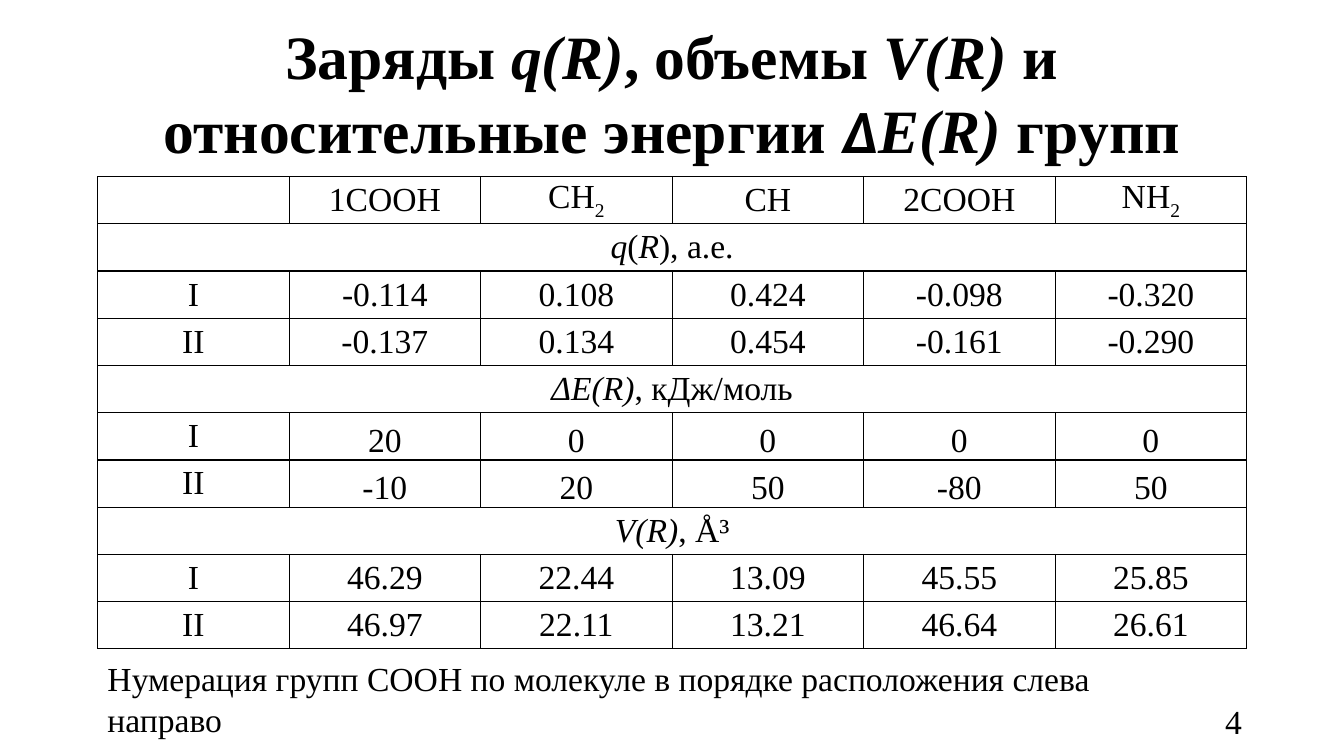
from dataclasses import dataclass

import lxml.etree
import pptx
import pptx.dml.color
import pptx.enum.text
import pptx.oxml.ns
import pptx.util

Cm = pptx.util.Cm
Align = pptx.enum.text.PP_ALIGN
Anchor = pptx.enum.text.MSO_ANCHOR


@dataclass(frozen=True)
class Theme:
    ink: str = "000000"
    font: str = "Times New Roman"
    symbol_font: str = "Calibri"
    title_size: int = 44
    body_size: int = 24
    border_width: int = 1


THEME = Theme()
ITALIC = {"italic": True}
SUBSCRIPT = -25000

# Each text is a list of (words, format) pairs
TITLE = [
    ("Заряды ", {}), ("q(R)", ITALIC), (", объемы ", {}), ("V(R) ", ITALIC),
    ("и относительные энергии ", {}),
    ("Δ", {"italic": True, "name": THEME.symbol_font}),
    ("E(R)", ITALIC), (" групп", {}),
]
NOTE = [("Нумерация групп COOH по молекуле в порядке расположения слева направо", {})]

# Column heads: formula and subscript
GROUPS = [("", ""), ("1COOH", ""), ("CH", "2"), ("CH", ""), ("2COOH", ""), ("NH", "2")]

# Sections: heading, anchor of the values, values of molecules I and II
SECTIONS = [
    ([("q", ITALIC), ("(", {}), ("R", ITALIC), ("), а.е.", {})], Anchor.MIDDLE,
     {"I": "-0.114 0.108 0.424 -0.098 -0.320",
      "II": "-0.137 0.134 0.454 -0.161 -0.290"}),
    ([("ΔE(R)", ITALIC), (", кДж/моль", {})], Anchor.BOTTOM,
     {"I": "20 0 0 0 0",
      "II": "-10 20 50 -80 50"}),
    ([("V(R)", ITALIC), (", Å³", {})], Anchor.MIDDLE,
     {"I": "46.29 22.44 13.09 45.55 25.85",
      "II": "46.97 22.11 13.21 46.64 26.61"}),
]


class SlideBuilder:
    def __init__(self, slide, theme):
        self.slide = slide
        self.theme = theme

    def add_spans(self, frame, pieces, align, **base):
        """Fill the first paragraph of a frame with formatted spans."""
        para = frame.paragraphs[0]
        para.alignment = align
        for words, changes in pieces:
            span = para.add_run()
            span.text = words
            style = {"name": self.theme.font, "size": self.theme.body_size,
                     "bold": False, "italic": False, **base, **changes}
            style["size"] = pptx.util.Pt(style["size"])
            baseline = style.pop("baseline", None)
            for key, value in style.items():
                setattr(span.font, key, value)
            span.font.color.rgb = pptx.dml.color.RGBColor.from_string(self.theme.ink)
            if baseline:
                span.font._element.set("baseline", str(baseline))

    def text(self, place, pieces, align, anchor=Anchor.TOP, wrap=True, **base):
        box = self.slide.shapes.add_textbox(*map(Cm, place))
        box.text_frame.word_wrap = wrap
        box.text_frame.vertical_anchor = anchor
        self.add_spans(box.text_frame, pieces, align, **base)

    def border(self, cell):
        properties = cell._tc.get_or_add_tcPr()
        for side in ("a:lnL", "a:lnR", "a:lnT", "a:lnB"):
            line = lxml.etree.SubElement(properties, pptx.oxml.ns.qn(side))
            line.set("w", str(pptx.util.Pt(self.theme.border_width)))
            fill = lxml.etree.SubElement(line, pptx.oxml.ns.qn("a:solidFill"))
            color = lxml.etree.SubElement(fill, pptx.oxml.ns.qn("a:srgbClr"))
            color.set("val", self.theme.ink)

    def table(self, place, rows, columns):
        table = self.slide.shapes.add_table(rows, columns, *map(Cm, place)).table
        for flag in ("first_row", "horz_banding"):
            setattr(table, flag, False)
        margins = {"margin_left": Cm(0.18), "margin_right": Cm(0.18),
                   "margin_top": 0, "margin_bottom": 0}
        for cell in table.iter_cells():
            for key, value in margins.items():
                setattr(cell, key, value)
            self.border(cell)
            cell.fill.background()
        return table

    def cell(self, cell, pieces, anchor=Anchor.MIDDLE):
        cell.vertical_anchor = anchor
        self.add_spans(cell.text_frame, pieces, Align.CENTER)


def main():
    deck = pptx.Presentation()
    deck.slide_width, deck.slide_height = Cm(33.87), Cm(19.05)
    page = SlideBuilder(deck.slides.add_slide(deck.slide_layouts[6]), THEME)

    # Title, note and page number
    page.text((3.53, 0.33, 26.8, 4.01), TITLE, Align.CENTER,
              size=THEME.title_size, bold=True)
    page.text((2.46, 16.46, 28.35, 1.27), NOTE, Align.LEFT, wrap=False)
    page.text((23.93, 17.65, 7.62, 1.02), [("4", {})], Align.RIGHT, Anchor.MIDDLE)

    # Table: column heads
    table = page.table((2.46, 4.45, 28.96, 11.9), 10, len(GROUPS))
    for column, (formula, index) in enumerate(GROUPS):
        pieces = [(formula, {}), (index, {"baseline": SUBSCRIPT})]
        page.cell(table.cell(0, column), [piece for piece in pieces if piece[0]])

    # Table: a merged heading and its rows for each section
    row = 1
    for heading, anchor, molecules in SECTIONS:
        table.cell(row, 0).merge(table.cell(row, len(GROUPS) - 1))
        page.cell(table.cell(row, 0), heading)
        for row, (molecule, values) in enumerate(molecules.items(), row + 1):
            page.cell(table.cell(row, 0), [(molecule, {})])
            for column, value in enumerate(values.split(), 1):
                page.cell(table.cell(row, column), [(value, {})], anchor)
        row += 1

    deck.save("out.pptx")


if __name__ == "__main__":
    main()
